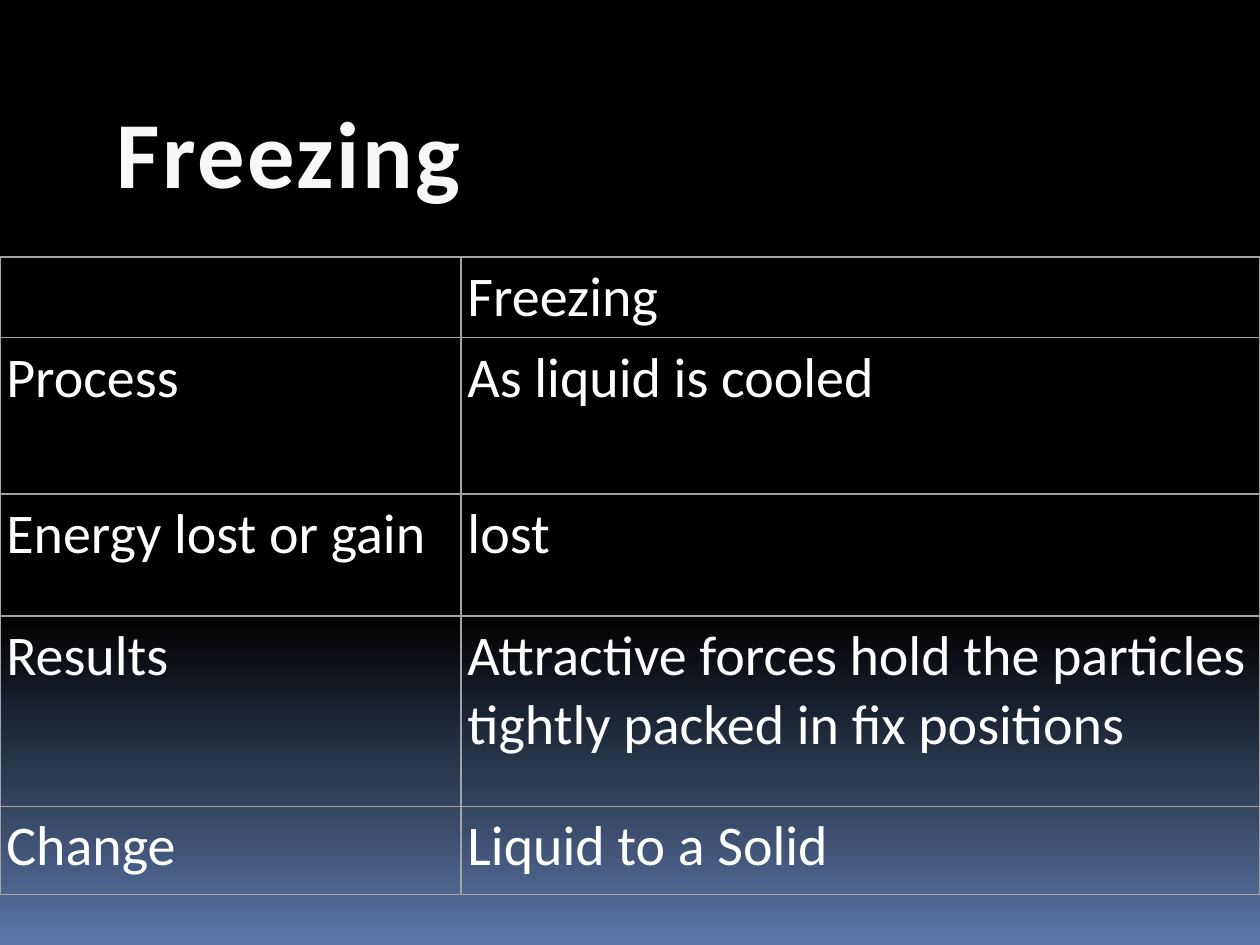
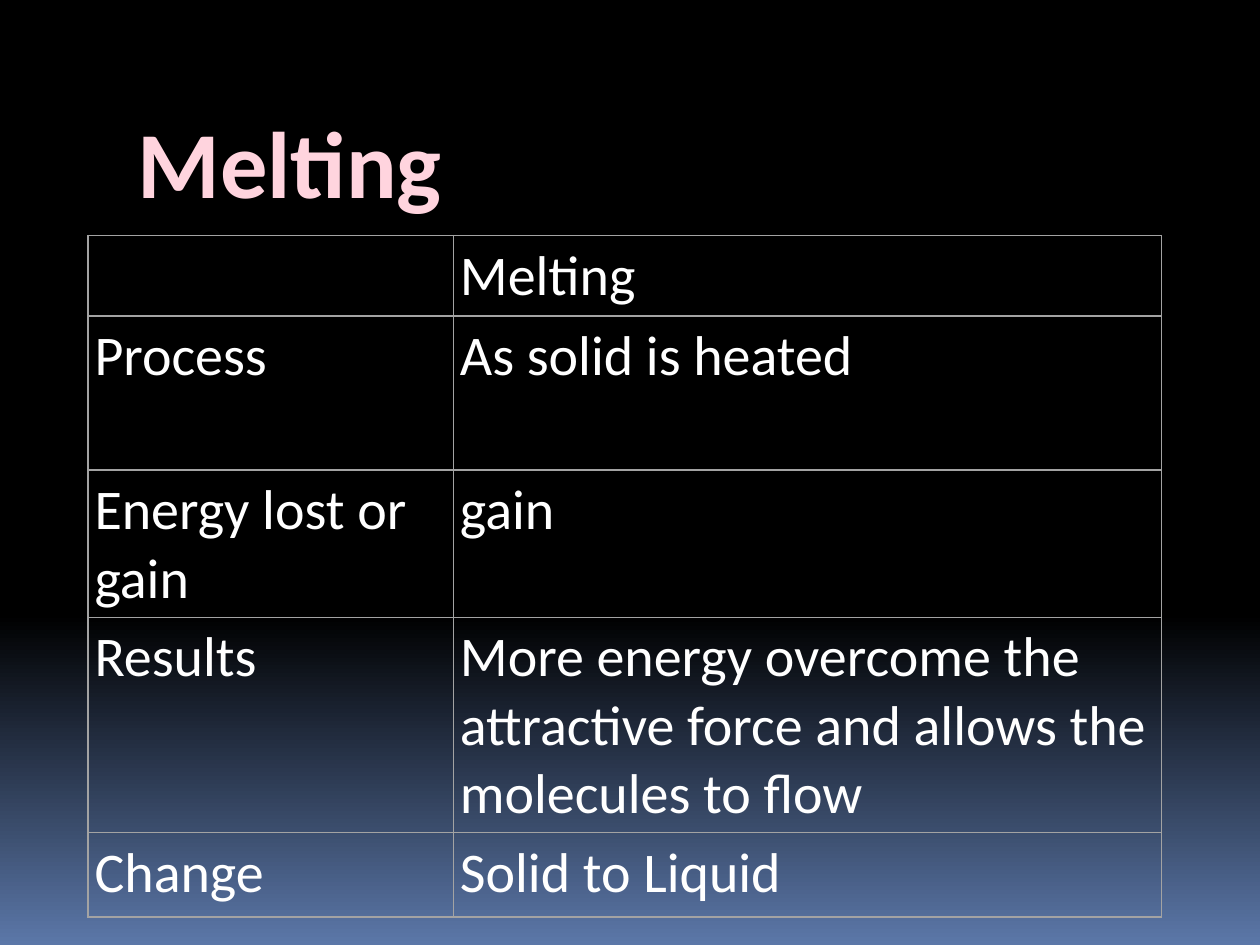
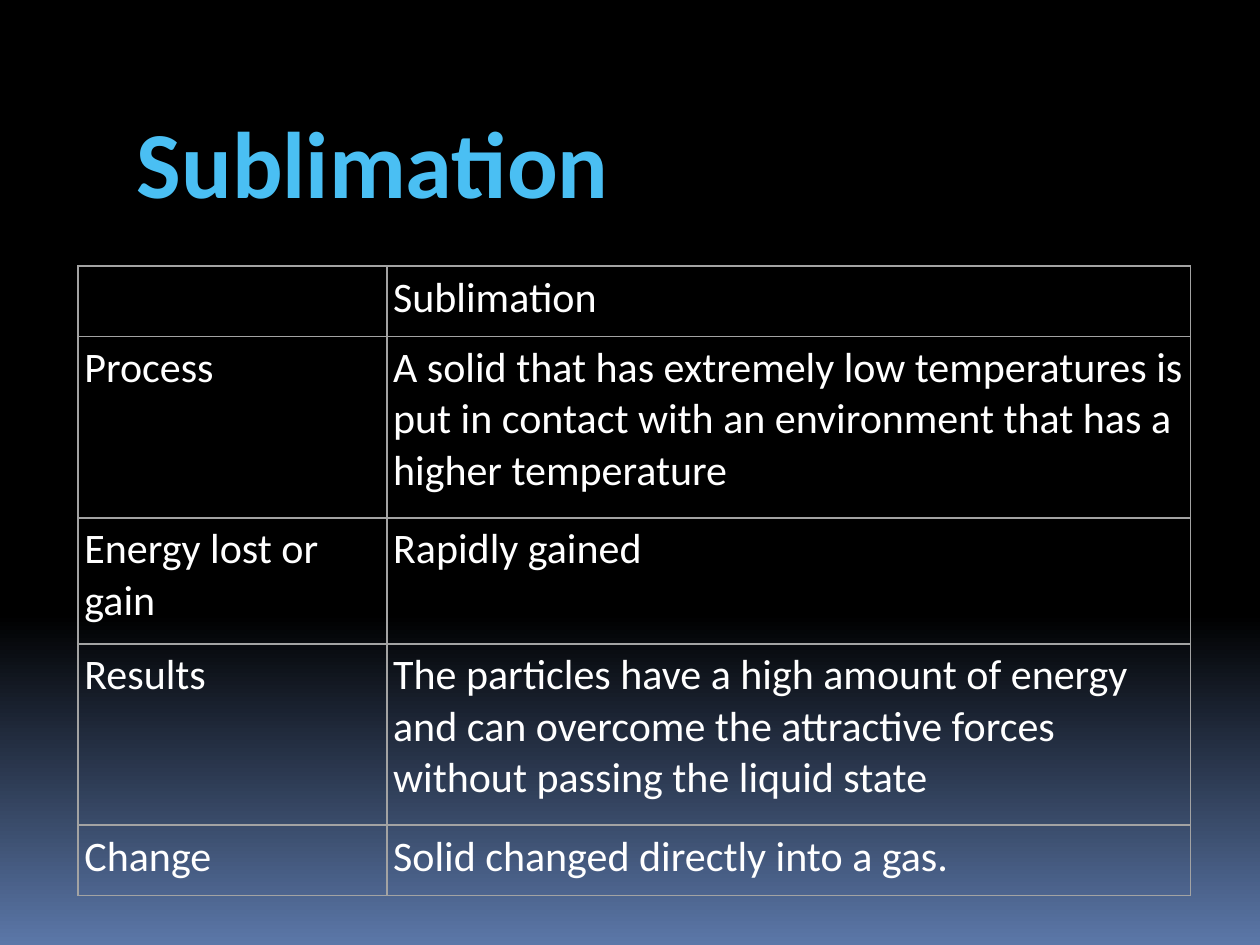
from dataclasses import dataclass
from typing import Any

from pptx import Presentation
from pptx import util as u
from pptx.dml.color import RGBColor
from pptx.enum import text
from pptx.oxml import parse_xml
from pptx.oxml.ns import nsdecls, qn

HUES = {
    "night": "000000", "dusk": "5B77A8", "rule": "A3A3A3", "text": "FFFFFF",
    "frost": "F8F8F8", "blush": "FFF2F5", "pink": "FFD4DE", "rose": "FF82A5",
    "edge": "EE0071", "sky": "7FD1FF", "blue": "4ABFF3",
}
FACE = "Calibri"
LABELS = ("", "Process", "Energy lost or gain", "Results", "Change")
HEAD = {"name": FACE, "size": u.Pt(54), "bold": True}
PAD = dict.fromkeys(
    ("margin_left", "margin_right", "margin_top", "margin_bottom"), u.Inches(0.05))
PLAIN = {"first_row": False, "horz_banding": False}

Stops = tuple[tuple[int, str], ...]
Spot = tuple[float, float, float, float]


@dataclass(frozen=True)
class Title:
    words: str
    spot: Spot
    stops: Stops
    edge: str = ""
    space: float = 0


@dataclass(frozen=True)
class Grid:
    left: float
    top: float
    cols: tuple[float, float]
    rows: tuple[float, ...]
    size: int
    facts: tuple[str, ...]


@dataclass(frozen=True)
class Page:
    title: Title
    grid: Grid


PAGES = (
    Page(
        Title("Freezing", (0.7, 0.7, 3.18, 1.01), ((0, "frost"),), space=1.5),
        Grid(0, 2.04, (3.66, 6.34), (0.64, 1.24, 0.97, 1.51, 0.7), 32, (
            "As liquid is cooled",
            "lost",
            "Attractive forces hold the particles tightly packed in fix positions",
            "Liquid to a Solid",
        )),
    ),
    Page(
        Title("Melting", (0.94, 0.78, 2.72, 1.01),
              ((10, "blush"), (60, "pink"), (100, "rose")), edge="edge"),
        Grid(0.7, 1.87, (2.9, 5.62), (0.64, 1.22, 1.17, 1.71, 0.67), 32, (
            "As solid is heated",
            "gain",
            "More energy overcome the attractive force and allows the molecules to flow",
            "Solid to Liquid",
        )),
    ),
    Page(
        Title("Sublimation", (0.86, 0.78, 4.2, 1.01),
              ((0, "sky"), (40, "blue"), (50, "blue"), (68, "blue"), (100, "sky"))),
        Grid(0.62, 2.11, (2.45, 6.38), (0.56, 1.44, 1, 1.44, 0.56), 24, (
            "A solid that has extremely low temperatures is put in contact "
            "with an environment that has a higher temperature",
            "Rapidly gained",
            "The particles have a high amount of energy and can overcome "
            "the attractive forces without passing the liquid state",
            "Solid changed directly into a gas.",
        )),
    ),
)


def apply(thing: Any, values: dict[str, Any]) -> None:
    for name, value in values.items():
        setattr(thing, name, value)


def tint(fill: Any, root: Any, stops: Stops) -> None:
    """Fill with one colour, or from top to bottom with several stops."""
    if len(stops) == 1:
        fill.solid()
        fill.fore_color.rgb = RGBColor.from_string(HUES[stops[0][1]])
        return
    fill.gradient()
    fill.gradient_angle = 270
    chain = root.find(".//" + qn("a:gsLst"))
    for stop in list(chain):
        chain.remove(stop)
    for place, hue in stops:
        chain.append(parse_xml(
            f'<a:gs {nsdecls("a")} pos="{place * 1000}">'
            f'<a:srgbClr val="{HUES[hue]}"/></a:gs>'))


def line(tag: str, hue: str, width: float) -> Any:
    return parse_xml(
        f'<a:{tag} {nsdecls("a")} w="{u.Pt(width)}"><a:solidFill>'
        f'<a:srgbClr val="{HUES[hue]}"/></a:solidFill></a:{tag}>')


def add_title(slide: Any, title: Title) -> None:
    box = slide.shapes.add_textbox(*map(u.Inches, title.spot))
    frame = box.text_frame
    apply(frame, {"word_wrap": False, "auto_size": text.MSO_AUTO_SIZE.SHAPE_TO_FIT_TEXT})
    para = frame.paragraphs[0]
    para.alignment = text.PP_ALIGN.CENTER
    run = para.add_run()
    run.text = title.words
    apply(run.font, HEAD)
    tint(run.font.fill, box.element, title.stops)
    props = box.element.find(".//" + qn("a:rPr"))
    if title.space:
        props.set("spc", str(round(title.space * 100)))
    if title.edge:
        props.insert(0, line("ln", title.edge, 1.93))


def fill_cell(cell: Any, words: str, size: int) -> None:
    apply(cell, PAD)
    cell.fill.background()
    props = cell.fill._xPr
    for spot, tag in enumerate(("lnL", "lnR", "lnT", "lnB")):
        props.insert(spot, line(tag, "rule", 1))
    if words:
        run = cell.text_frame.paragraphs[0].add_run()
        run.text = words
        apply(run.font, {"name": FACE, "size": u.Pt(size)})
        run.font.color.rgb = RGBColor.from_string(HUES["text"])


def add_grid(slide: Any, grid: Grid, head: str) -> None:
    spot = (grid.left, grid.top, sum(grid.cols), sum(grid.rows))
    table = slide.shapes.add_table(
        len(grid.rows), len(grid.cols), *map(u.Inches, spot)).table
    apply(table, PLAIN)
    for col, width in zip(table.columns, grid.cols):
        col.width = u.Inches(width)
    for row, height, *pair in zip(table.rows, grid.rows, LABELS, (head, *grid.facts)):
        row.height = u.Inches(height)
        for cell, words in zip(row.cells, pair):
            fill_cell(cell, words, grid.size)


def main() -> None:
    deck = Presentation()
    apply(deck, {"slide_width": u.Inches(10), "slide_height": u.Inches(7.5)})
    master = deck.slide_master
    tint(master.background.fill, master.element,
         ((0, "night"), (65, "night"), (100, "dusk")))
    for page in PAGES:
        slide = deck.slides.add_slide(deck.slide_layouts[6])
        add_title(slide, page.title)
        add_grid(slide, page.grid, page.title.words)
    deck.save("out.pptx")


if __name__ == "__main__":
    main()
